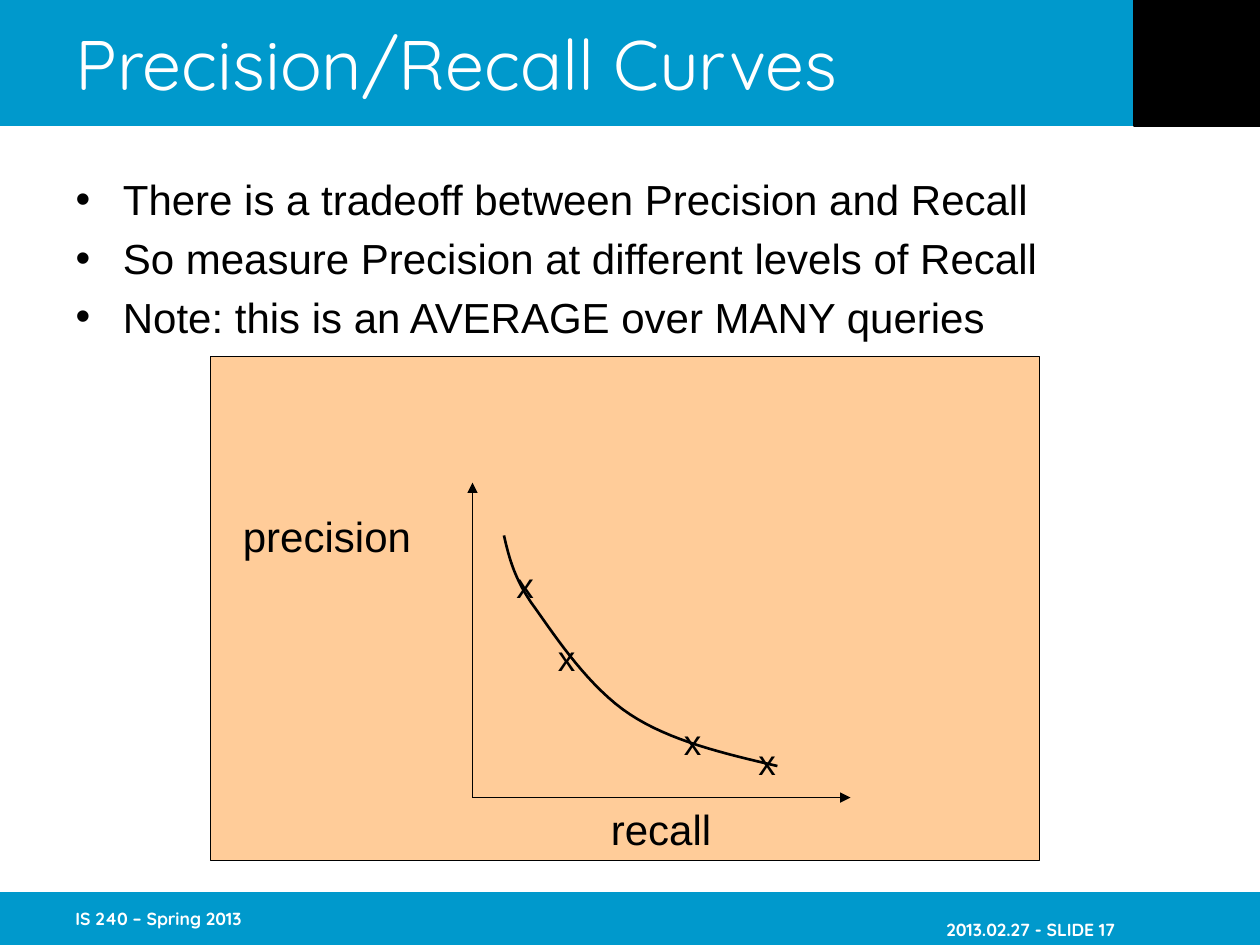
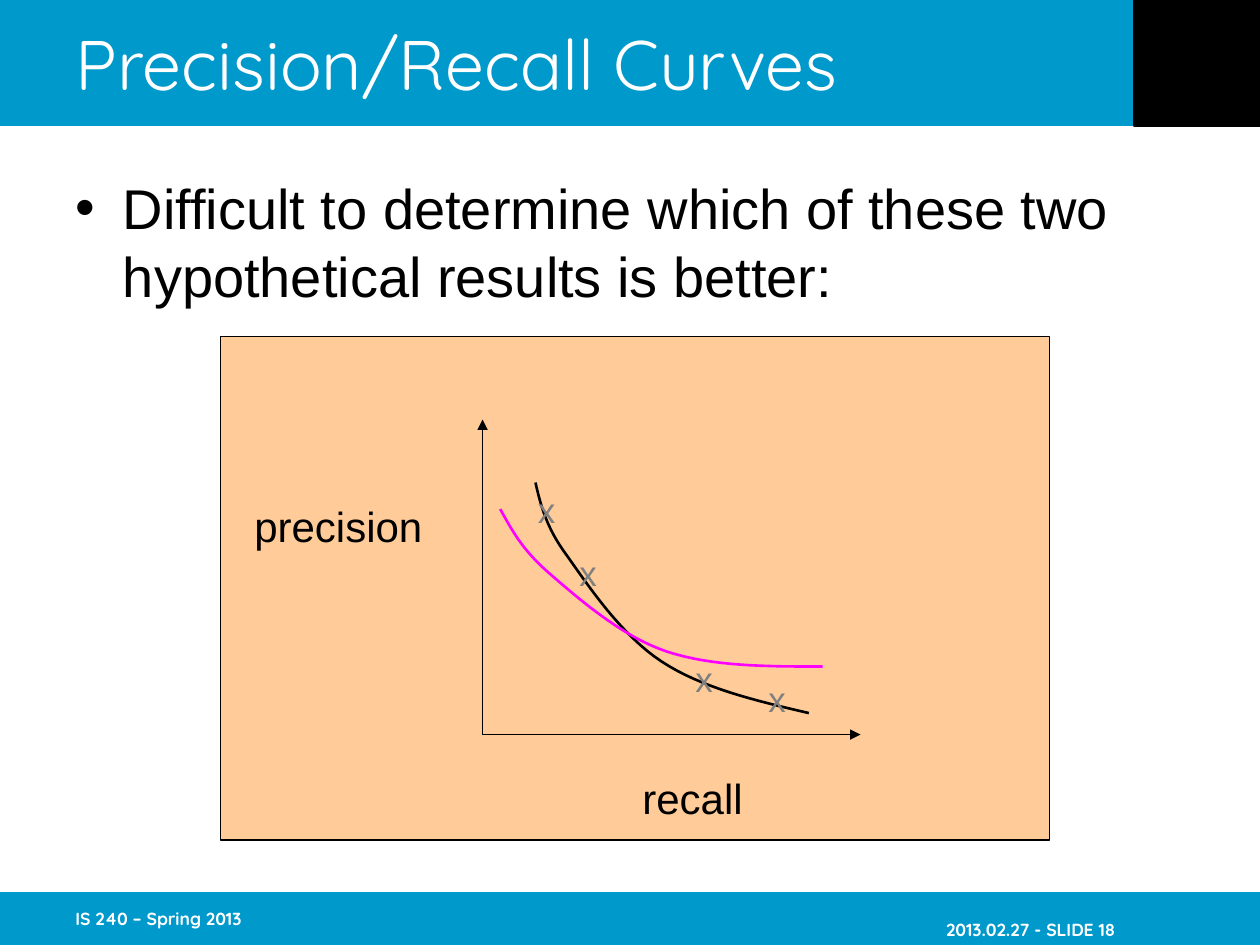
from dataclasses import dataclass

from lxml import etree
from pptx import Presentation
from pptx.dml.color import RGBColor
from pptx.enum.shapes import MSO_CONNECTOR, MSO_SHAPE
from pptx.enum.text import MSO_ANCHOR, MSO_AUTO_SIZE, PP_ALIGN
from pptx.oxml.ns import qn
from pptx.util import Inches, Pt

BLUE = RGBColor(0x00, 0x99, 0xCC)
BLACK = RGBColor(0x00, 0x00, 0x00)
WHITE = RGBColor(0xFF, 0xFF, 0xFF)
PEACH = RGBColor(0xFF, 0xCC, 0x99)
GRAY = RGBColor(0x80, 0x80, 0x80)
MAGENTA = RGBColor(0xFF, 0x00, 0xFF)

RECT = MSO_SHAPE.RECTANGLE
STRAIGHT = MSO_CONNECTOR.STRAIGHT
MIDDLE, TOP = MSO_ANCHOR.MIDDLE, MSO_ANCHOR.TOP
NO_FIT, GROW = MSO_AUTO_SIZE.NONE, MSO_AUTO_SIZE.SHAPE_TO_FIT_TEXT
LEFT, RIGHT = PP_ALIGN.LEFT, PP_ALIGN.RIGHT

HEAD_FONT, BODY_FONT = "Quicksand", "Arial"
BAND_TOP, BAND_HEIGHT = 7.08, 0.42
CURVE_STEPS = 16

Point = tuple[float, float]

STEEP = [(0, 0), (0.04, 0.17), (0.08, 0.35), (0.25, 0.58), (0.42, 0.82),
         (0.68, 1.21), (1, 1.42), (1.32, 1.63), (1.74, 1.73), (2.17, 1.83)]
SHALLOW = [(0, 0), (0.09, 0.16), (0.17, 0.32), (0.39, 0.51), (0.61, 0.7),
           (0.96, 1.01), (1.32, 1.13), (1.68, 1.25), (2.12, 1.25), (2.56, 1.25)]


@dataclass(frozen=True)
class Curve:
    start: Point
    controls: list[Point]
    color: RGBColor


@dataclass(frozen=True)
class Plot:
    panel: Point
    origin: Point
    precision: Point
    recall: Point
    marks: list[Point]
    mark_color: RGBColor
    curves: list[Curve]


@dataclass(frozen=True)
class CurveSlide:
    number: int
    bullets: list[str]
    bullet_size: int
    plot: Plot


SLIDES = [
    CurveSlide(
        17,
        ["There is a tradeoff between Precision and Recall",
         "So measure Precision at different levels of Recall",
         "Note: this is an AVERAGE over MANY queries"],
        24,
        Plot((1.67, 2.83), (3.75, 6.33), (1.83, 4), (4.75, 6.33),
             [(5.33, 5.67), (4, 4.42), (4.33, 5), (5.92, 5.83)], BLACK,
             [Curve((4, 4.25), STEEP, BLACK)]),
    ),
    CurveSlide(
        18,
        ["Difficult to determine which of these two hypothetical results is better:"],
        32,
        Plot((1.75, 2.67), (3.83, 5.83), (1.92, 3.92), (5, 6.08),
             [(5.42, 5.17), (4.17, 3.83), (4.5, 4.33), (6, 5.33)], GRAY,
             [Curve((4.25, 3.83), STEEP, BLACK),
              Curve((3.97, 4.04), SHALLOW, MAGENTA)]),
    ),
]


def place(sp, x: float, y: float, w: float, h: float) -> None:
    sp.left, sp.top, sp.width, sp.height = map(Inches, (x, y, w, h))


def style(p, name: str, size: int, color: RGBColor, bold: bool = False) -> None:
    p.font.name, p.font.size, p.font.bold = name, Pt(size), bold
    p.font.color.rgb = color


def add_rect(s, x: float, y: float, w: float, h: float, fill: RGBColor,
             line_width: float = 0) -> None:
    sp = s.shapes.add_shape(RECT, *map(Inches, (x, y, w, h)))
    sp.shadow.inherit = False
    sp.fill.solid()
    sp.fill.fore_color.rgb = fill
    if line_width:
        sp.line.color.rgb = BLACK
        sp.line.width = Pt(line_width)
    else:
        sp.line.fill.background()


def add_footer(s, x: float, text: str, align: PP_ALIGN,
               top_inset: float = 0.05) -> None:
    box = s.shapes.add_textbox(*map(Inches, (x, BAND_TOP, 2.08, BAND_HEIGHT)))
    tf = box.text_frame
    tf.word_wrap = True
    tf.vertical_anchor = MIDDLE
    tf.margin_top, tf.margin_right = Inches(top_inset), 0
    p = tf.paragraphs[0]
    p.text, p.alignment = text, align
    style(p, HEAD_FONT, 10, WHITE, bold=True)


def add_label(s, at: Point, w: float, h: float, text: str, size: int,
              color: RGBColor) -> None:
    box = s.shapes.add_textbox(*map(Inches, (*at, w, h)))
    tf = box.text_frame
    tf.word_wrap, tf.auto_size = False, GROW
    p = tf.paragraphs[0]
    p.text = text
    style(p, BODY_FONT, size, color)


def add_axis(s, start: Point, end: Point) -> None:
    axis = s.shapes.add_connector(STRAIGHT, *map(Inches, (*start, *end)))
    axis.line.color.rgb = BLACK
    axis.line.width = Pt(1)
    sp_pr = axis._element.spPr
    etree.SubElement(sp_pr.find(qn("a:ln")), qn("a:tailEnd"), type="triangle")
    etree.SubElement(sp_pr, qn("a:effectLst"))


def bezier(a: float, b: float, c: float, d: float, t: float) -> float:
    u = 1 - t
    return u**3 * a + 3 * u**2 * t * b + 3 * u * t**2 * c + t**3 * d


def add_curve(s, curve: Curve) -> None:
    x0, y0 = curve.start
    points = []
    for i in range(0, len(curve.controls) - 1, 3):
        xs, ys = zip(*curve.controls[i:i + 4])
        for step in range(1, CURVE_STEPS + 1):
            t = step / CURVE_STEPS
            points.append((Inches(x0 + bezier(*xs, t)), Inches(y0 + bezier(*ys, t))))
    builder = s.shapes.build_freeform(Inches(x0), Inches(y0))
    builder.add_line_segments(points, close=False)
    sp = builder.convert_to_shape()
    sp.shadow.inherit = False
    sp.fill.background()
    sp.line.color.rgb = curve.color
    sp.line.width = Pt(1.5)


def add_plot(s, plot: Plot) -> None:
    add_rect(s, *plot.panel, 6.58, 4, PEACH, 1)
    x, y = plot.origin
    add_axis(s, plot.origin, (x, y - 2.5))
    add_axis(s, plot.origin, (x + 3, y))
    add_label(s, plot.precision, 1.6, 0.5, "precision", 24, BLACK)
    add_label(s, plot.recall, 1, 0.5, "recall", 24, BLACK)
    for curve in plot.curves:
        add_curve(s, curve)
    for mark in plot.marks:
        add_label(s, mark, 0.34, 0.43, "x", 20, plot.mark_color)


def add_frame(s, number: int) -> None:
    add_rect(s, 0, 0, 10, 1, BLUE)
    add_rect(s, 0, BAND_TOP, 10, BAND_HEIGHT, BLUE)
    add_rect(s, 9, 0, 1, 1, BLACK, 0.75)
    add_footer(s, 0.5, "IS 240 – Spring 2013", LEFT)
    add_footer(s, 6.77, f"2013.02.27 - SLIDE {number}", RIGHT, 0.22)


def fill_title(s) -> None:
    title = s.shapes.title
    s.shapes._spTree.append(title._element)
    place(title, 0.5, 0, 8.5, 1)
    tf = title.text_frame
    tf.auto_size, tf.vertical_anchor = NO_FIT, MIDDLE
    p = tf.paragraphs[0]
    p.text, p.alignment = "Precision/Recall Curves", LEFT
    style(p, HEAD_FONT, 40, WHITE)


def fill_bullets(s, bullets: list[str], size: int) -> None:
    body = s.placeholders[1]
    place(body, 0.5, 1.33, 9, 5.42)
    tf = body.text_frame
    tf.auto_size, tf.vertical_anchor = NO_FIT, TOP
    tf.margin_top, tf.margin_bottom = Inches(0.05), 0
    for i, text in enumerate(bullets):
        p = tf.add_paragraph() if i else tf.paragraphs[0]
        p.text = text
        p.space_before = Pt(4.7 if i else 0)
        style(p, BODY_FONT, size, BLACK)


def main() -> None:
    prs = Presentation()
    prs.slide_width, prs.slide_height = Inches(10), Inches(7.5)
    for data in SLIDES:
        s = prs.slides.add_slide(prs.slide_layouts[1])
        add_frame(s, data.number)
        fill_title(s)
        fill_bullets(s, data.bullets, data.bullet_size)
        add_plot(s, data.plot)
    prs.save("out.pptx")


if __name__ == "__main__":
    main()
